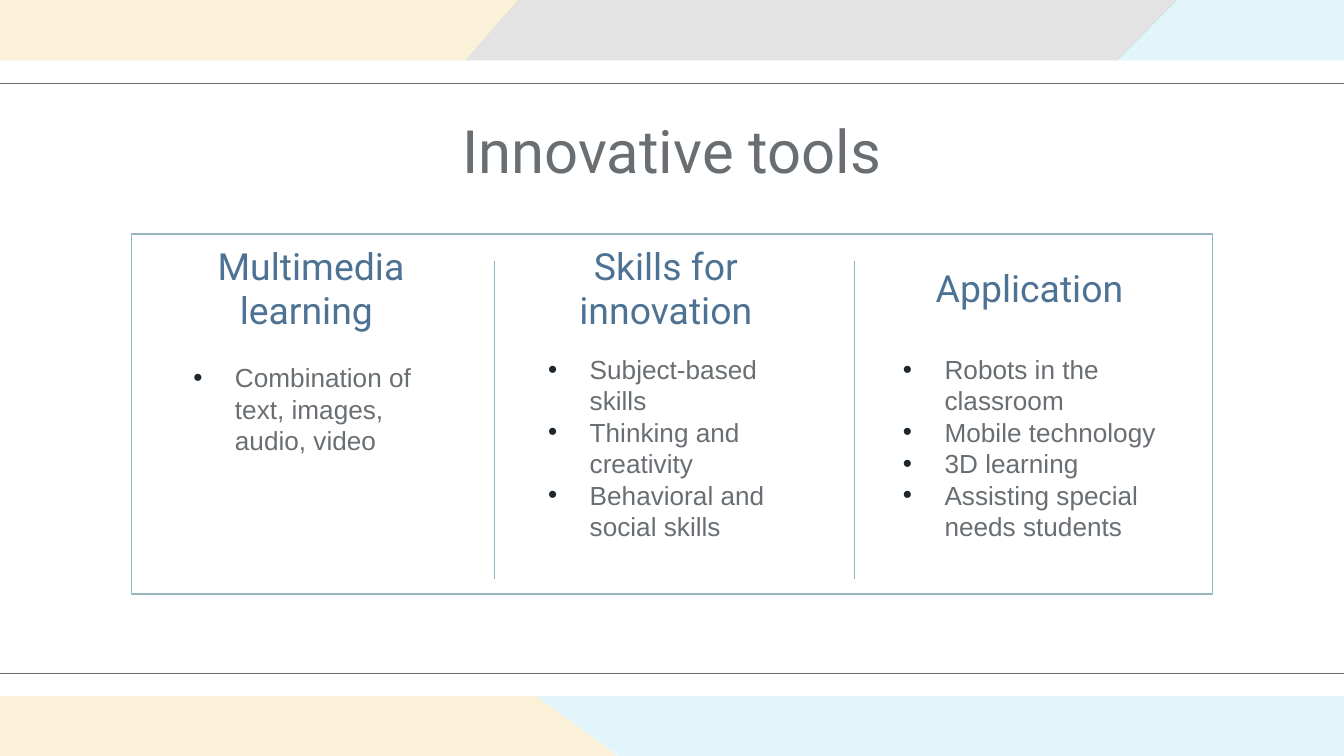
from lxml import etree
from pptx import Presentation
from pptx.dml.color import RGBColor
from pptx.enum.shapes import MSO_CONNECTOR, MSO_SHAPE
from pptx.enum.text import MSO_ANCHOR, PP_ALIGN
from pptx.oxml.ns import qn
from pptx.util import Inches, Pt

LINE = MSO_CONNECTOR.STRAIGHT
RECTANGLE = MSO_SHAPE.RECTANGLE
TOP, MIDDLE = MSO_ANCHOR.TOP, MSO_ANCHOR.MIDDLE
LEFT, CENTER = PP_ALIGN.LEFT, PP_ALIGN.CENTER

WHITE = RGBColor(0xFF, 0xFF, 0xFF)
GRAY = RGBColor(0x69, 0x6E, 0x72)
BLUE = RGBColor(0x4D, 0x72, 0x93)
FRAME_BLUE = RGBColor(0x96, 0xB3, 0xC1)
BULLET_DARK = RGBColor(0x1D, 0x26, 0x2D)
SAND = RGBColor(0xF7, 0xE5, 0xB7)
CHARCOAL = RGBColor(0x59, 0x59, 0x59)
SKY = RGBColor(0x9E, 0xDD, 0xEF)

TITLE_FONT = {"name": "Roboto", "size": Pt(32)}
HEADING_FONT = {"name": "Roboto", "size": Pt(20)}
BODY_FONT = {"name": "Arial", "size": Pt(14)}

# Backdrop facets: colour, opacity in percent, corners
FACETS = [
    (SAND, 53, [(3.95, -0.1), (-0.07, -0.1), (-0.07, 5.68), (4.67, 5.68), (1.13, 3.07)]),
    (CHARCOAL, 17, [(3.92, -0.07), (8.83, -0.07), (3.77, 5.02), (1.13, 3.1)]),
    (SKY, 29, [(8.82, -0.07), (10.08, -0.07), (10.08, 5.78), (4.68, 5.68), (3.77, 5.02)]),
]

FRAME_LEFT, FRAME_TOP, FRAME_WIDTH, FRAME_HEIGHT = 0.98, 1.74, 8.04, 2.68
COLUMN_WIDTH = FRAME_WIDTH / 3

# Columns: heading, heading left and width, list box, list items
COLUMNS = [
    ("Multimedia learning ", 1.15, 2.33, (1.34, 2.75, 2.04, 0.58),
     ["Combination of text, images, audio, video"]),
    ("Skills for innovation", 3.8, 2.31, (3.98, 3.04, 2.13, 0.58),
     ["Subject-based skills", "Thinking and creativity",
      "Behavioral and social skills"]),
    ("Application ", 6.54, 2.31, (6.62, 3.04, 2.23, 0.58),
     ["Robots in the classroom", "Mobile technology", "3D learning",
      "Assisting special needs students"]),
]


def add_facet(slide, color, opacity, corners):
    points = [(Inches(x), Inches(y)) for x, y in corners]
    builder = slide.shapes.build_freeform(*points[0])
    builder.add_line_segments(points[1:], close=True)
    facet = builder.convert_to_shape()
    facet.shadow.inherit = False
    facet.fill.solid()
    facet.fill.fore_color.rgb = color
    rgb = facet._element.spPr.find(qn("a:solidFill")).find(qn("a:srgbClr"))
    etree.SubElement(rgb, qn("a:alpha"), val=str(opacity * 1000))
    facet.line.fill.background()


def add_panel(slide, box, fill=None, outline=None):
    panel = slide.shapes.add_shape(RECTANGLE, *map(Inches, box))
    panel.shadow.inherit = False
    if fill is None:
        panel.fill.background()
    else:
        panel.fill.solid()
        panel.fill.fore_color.rgb = fill
    if outline is None:
        panel.line.fill.background()
    else:
        panel.line.color.rgb = outline
        panel.line.width = Pt(0.75)


def add_rule(slide, start, end, color):
    rule = slide.shapes.add_connector(LINE, *map(Inches, start + end))
    rule.line.color.rgb = color
    rule.line.width = Pt(0.75)
    etree.SubElement(rule._element.spPr, qn("a:effectLst"))


def add_bullet(paragraph):
    properties = paragraph._p.get_or_add_pPr()
    properties.set("marL", str(Inches(0.31)))
    properties.set("indent", str(Inches(-0.31)))
    bullet_color = etree.SubElement(properties, qn("a:buClr"))
    etree.SubElement(bullet_color, qn("a:srgbClr"), val=str(BULLET_DARK))
    etree.SubElement(properties, qn("a:buFont"), typeface="Arial")
    etree.SubElement(properties, qn("a:buChar"), char="•")


def add_text(slide, box, lines, font, color, anchor=MIDDLE, align=CENTER, bulleted=False):
    frame = slide.shapes.add_textbox(*map(Inches, box)).text_frame
    frame.word_wrap = True
    frame.vertical_anchor = anchor
    for side in ("left", "top", "right", "bottom"):
        setattr(frame, f"margin_{side}", Inches(0.1))
    for index, line in enumerate(lines):
        paragraph = frame.add_paragraph() if index else frame.paragraphs[0]
        paragraph.alignment = align
        if bulleted:
            add_bullet(paragraph)
        run = paragraph.add_run()
        run.text = line
        for attribute, value in font.items():
            setattr(run.font, attribute, value)
        run.font.color.rgb = color


def main():
    # Widescreen 16:9 page
    presentation = Presentation()
    presentation.slide_width = Inches(10)
    presentation.slide_height = Inches(10 * 9 / 16)
    slide = presentation.slides.add_slide(presentation.slide_layouts[6])

    # Backdrop with white band and its rules
    for color, opacity, corners in FACETS:
        add_facet(slide, color, opacity, corners)
    add_panel(slide, (-0.03, 0.45, 10.05, 4.73), fill=WHITE)
    for y in (0.62, 5.01):
        add_rule(slide, (-0.12, y), (10.04, y), GRAY)

    # Frame and column dividers
    add_panel(slide, (FRAME_LEFT, FRAME_TOP, FRAME_WIDTH, FRAME_HEIGHT), outline=FRAME_BLUE)
    for column in (1, 2):
        x = FRAME_LEFT + 0.02 + column * COLUMN_WIDTH
        add_rule(slide, (x, 1.94), (x, 4.31), FRAME_BLUE)

    # Title and columns
    add_text(slide, (2.16, 0.75, 5.68, 0.58), ["Innovative tools"], TITLE_FONT, GRAY, anchor=TOP)
    for heading, left, width, list_box, items in COLUMNS:
        add_text(slide, (left, 1.92, width, 0.44), [heading], HEADING_FONT, BLUE)
        add_text(slide, list_box, items, BODY_FONT, GRAY, align=LEFT, bulleted=True)

    presentation.save("out.pptx")


if __name__ == "__main__":
    main()
